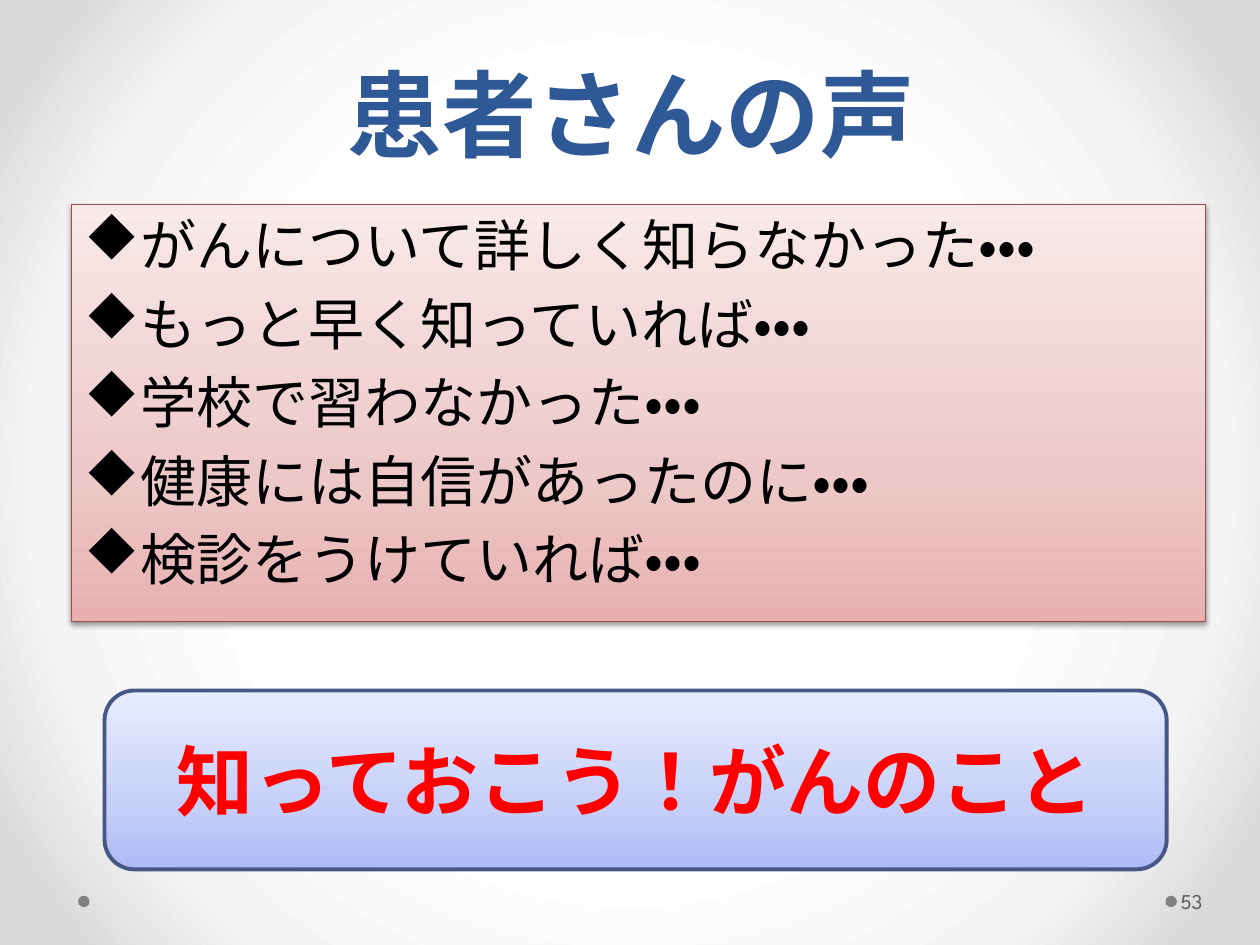
from lxml import etree
from pptx import Presentation
from pptx.dml.color import RGBColor
from pptx.enum.lang import MSO_LANGUAGE_ID
from pptx.enum.shapes import MSO_SHAPE
from pptx.enum.text import MSO_ANCHOR, PP_ALIGN
from pptx.oxml.ns import qn
from pptx.util import Emu, Inches, Pt

RECT, ROUND, OVAL = MSO_SHAPE.RECTANGLE, MSO_SHAPE.ROUNDED_RECTANGLE, MSO_SHAPE.OVAL
TOP, MIDDLE = MSO_ANCHOR.TOP, MSO_ANCHOR.MIDDLE
LEFT, CENTER = PP_ALIGN.LEFT, PP_ALIGN.CENTER
JAPAN = MSO_LANGUAGE_ID.JAPANESE

BLACK = RGBColor(0x00, 0x00, 0x00)
NAVY = RGBColor(0x2F, 0x58, 0x97)
RED = RGBColor(0xFF, 0x00, 0x00)
GRAY = RGBColor(0x80, 0x80, 0x80)
SLATE = RGBColor(0x59, 0x59, 0x59)
MAROON = RGBColor(0x9A, 0x4E, 0x4E)
INDIGO = RGBColor(0x47, 0x57, 0x85)
GLOW = [(50, RGBColor(0xFF, 0xFF, 0xFF)), (76, RGBColor(0xF4, 0xF4, 0xF4)),
        (92, RGBColor(0xDA, 0xDA, 0xDA))]
PINK = [(0, RGBColor(0xE8, 0xB0, 0xB0)), (35, RGBColor(0xED, 0xC8, 0xC8)),
        (100, RGBColor(0xF9, 0xE9, 0xE9))]
BLUE = [(0, RGBColor(0xAD, 0xBB, 0xF6)), (35, RGBColor(0xC5, 0xCF, 0xF8)),
        (100, RGBColor(0xE8, 0xEC, 0xFD))]

SERIF, SANS = "Vollkorn", "League Spartan"
WIDE, HIGH = Inches(10), Inches(7.5)
VOICES = ["がんについて詳しく知らなかった・・・", "もっと早く知っていれば・・・",
          "学校で習わなかった・・・", "健康には自信があったのに・・・",
          "検診をうけていれば・・・"]


def add(parent, tag, **attrs):
    node = etree.SubElement(parent, qn(tag))
    for key, value in attrs.items():
        node.set(key, str(value))
    return node


def shade(owner, stops, angle=None):
    """Swap the solid fill of owner for a linear or round gradient."""
    old = owner.find(qn("a:solidFill"))
    grad = etree.Element(qn("a:gradFill"), rotWithShape="1")
    ramp = add(grad, "a:gsLst")
    for pos, color in stops:
        add(add(ramp, "a:gs", pos=pos * 1000), "a:srgbClr", val=color)
    if angle is None:
        ring = add(grad, "a:path", path="circle")
        add(ring, "a:fillToRect", l=50000, t=50000, r=50000, b=50000)
    else:
        add(grad, "a:lin", ang=angle * 60000, scaled=0)
    owner.replace(old, grad)


def panel(slide, kind, box, fill, line=None, width=0):
    shape = slide.shapes.add_shape(kind, *box)
    shape.shadow.inherit = False
    shape.fill.solid()
    if isinstance(fill, list):
        shade(shape.element.spPr, fill, 270)
    else:
        shape.fill.fore_color.rgb = fill
    if line is None:
        shape.line.fill.background()
    else:
        shape.line.color.rgb = line
        shape.line.width = Pt(width)
    return shape


def write(shape, lines, size, color, bold=False, align=LEFT, anchor=MIDDLE, face=SERIF):
    frame = shape.text_frame
    frame.word_wrap = True
    frame.vertical_anchor = anchor
    frame.text = "\n".join(lines)
    for para in frame.paragraphs:
        para.alignment = align
        font = para.font
        font.name, font.size, font.bold = face, Pt(size), bold
        font.color.rgb = color
        # Japanese glyph forms
        for run in para.runs:
            run.font.language_id = JAPAN
            run.font._element.set("altLang", "ja-JP")
    return frame


def title(slide, box):
    frame = write(slide.shapes.add_textbox(*box), ["患者さんの声"], 54, NAVY, True, CENTER)
    frame.paragraphs[0].line_spacing = Pt(58)


def voices(slide, box):
    shape = panel(slide, RECT, box, PINK, MAROON, 0.75)
    # Soft shadow below the panel
    effects = shape.element.spPr.find(qn("a:effectLst"))
    cast = add(effects, "a:outerShdw", blurRad=Pt(3.1), dist=Pt(1.6),
               dir=90 * 60000, rotWithShape=0)
    add(add(cast, "a:srgbClr", val=BLACK), "a:alpha", val=38000)
    # Diamond list with a hanging indent
    hang = Inches(0.38)
    for para in write(shape, VOICES, 32, BLACK, anchor=TOP).paragraphs:
        props = para._p.pPr
        props.set("marL", str(hang))
        props.set("indent", str(-hang))
        para.space_before = Pt(6.4)
        fonts = props.find(qn("a:defRPr"))
        fonts.addprevious(etree.Element(qn("a:buFont"), typeface="Wingdings",
                                        pitchFamily="2", charset="2"))
        fonts.addprevious(etree.Element(qn("a:buChar"), char="u"))


def slogan(slide, box):
    shape = panel(slide, ROUND, box, BLUE, INDIGO, 2.25)
    write(shape, ["知っておこう！がんのこと"], 44, RED, True, CENTER)


def footer(slide, box):
    left, top, width, height = box
    dot = Inches(0.09)
    for x in (left, left + width - dot):
        panel(slide, OVAL, (x, top + (height - dot) // 2, dot, dot), GRAY)
    page = slide.shapes.add_textbox(left + width, top, Inches(0.61), height)
    frame = write(page, ["53"], 12, SLATE, face=SANS)
    frame.margin_left, frame.margin_right = Inches(0.03), Inches(0.05)


def share(x, y, w, h):
    """Box from percent shares of the slide's size."""
    return [Emu(int(part * whole / 100))
            for part, whole in zip((x, y, w, h), (WIDE, HIGH, WIDE, HIGH))]


def main():
    deck = Presentation()
    deck.slide_width, deck.slide_height = WIDE, HIGH
    slide = deck.slides.add_slide(deck.slide_layouts[6])
    slide.background.fill.solid()
    shade(slide.element.find(".//" + qn("p:bgPr")), GLOW)
    footer(slide, share(6.2, 92.73, 87.2, 5.33))
    title(slide, share(5.1, 3.87, 90, 17.47))
    voices(slide, share(5.7, 21.65, 90, 44.13))
    slogan(slide, share(8.3, 73.07, 84.3, 18.93))
    deck.save("out.pptx")


if __name__ == "__main__":
    main()
